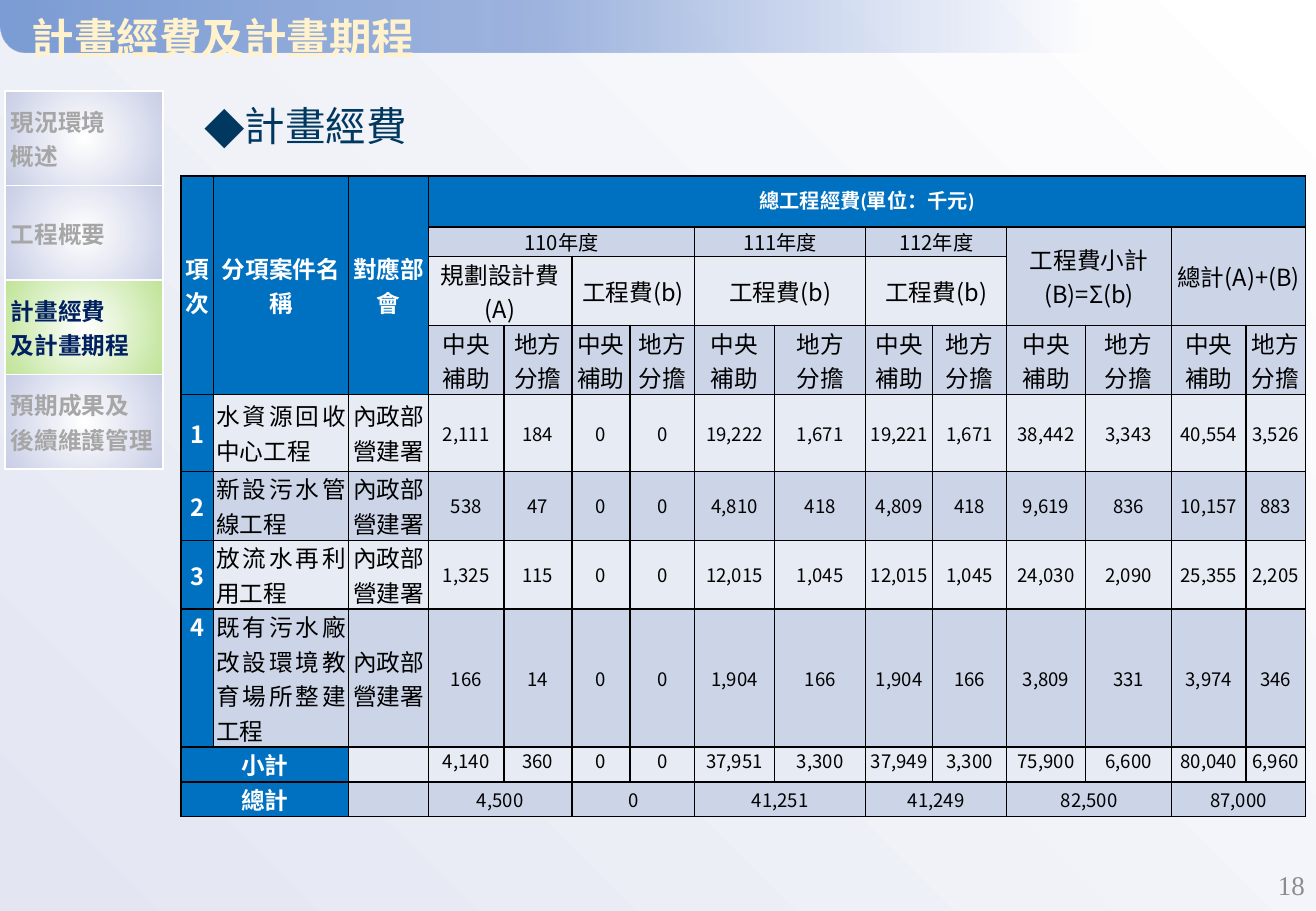
from lxml import etree
from pptx import Presentation
from pptx.dml.color import RGBColor
from pptx.enum.shapes import MSO_SHAPE
from pptx.enum.text import MSO_ANCHOR, MSO_AUTO_SIZE, PP_ALIGN
from pptx.oxml.ns import qn
from pptx.util import Pt

LEFT, CENTER, RIGHT, JUSTIFY = PP_ALIGN.LEFT, PP_ALIGN.CENTER, PP_ALIGN.RIGHT, PP_ALIGN.JUSTIFY
TOP, MIDDLE = MSO_ANCHOR.TOP, MSO_ANCHOR.MIDDLE
DIAG_RECT = MSO_SHAPE.ROUND_2_DIAG_RECTANGLE
NO_FIT = MSO_AUTO_SIZE.NONE

CJK, SERIF, SANS = "Noto Sans CJK SC", "Times New Roman", "Calibri"
BLUE, PALE, LIGHT = "0070C0", "CCD5E8", "E7EBF4"
BLACK, WHITE, GREY = "000000", "FFFFFF", "A6A6A6"

SECTIONS = [["現況環境", "概述"], ["工程概要"], ["計畫經費", "及計畫期程"], ["預期成果及", "後續維護管理"]]
CURRENT_SECTION = 2

COLUMNS = [19.4, 79.9, 47.5, 44.6, 40.3, 34.6, 38.2, 47.5, 54, 39.6, 43.9, 46.8, 51.1, 43.9, 35.3]
ROWS = [30.2, 17.2, 40.9, 40.9, 45.6, 40.9, 40.9, 81.2, 20.7, 20.2]
LABEL_HEADS = ["項次", "分項案件名稱", "對應部會"]
YEARS = [(3, 4, "110年度"), (7, 2, "111年度"), (9, 2, "112年度")]
SUMS = [(11, "工程費小計(B)=Σ(b)"), (13, "總計(A)+(B)")]
COSTS = ["規劃設計費(A)"] + ["工程費(b)"] * 3
SHARES = [["中央", "補助"], ["地方", "分擔"]]
PROJECTS = [
    ("水資源回收中心工程", "2,111 184 0 0 19,222 1,671 19,221 1,671 38,442 3,343 40,554 3,526"),
    ("新設污水管線工程", "538 47 0 0 4,810 418 4,809 418 9,619 836 10,157 883"),
    ("放流水再利用工程", "1,325 115 0 0 12,015 1,045 12,015 1,045 24,030 2,090 25,355 2,205"),
    ("既有污水廠改設環境教育場所整建工程", "166 14 0 0 1,904 166 1,904 166 3,809 331 3,974 346"),
]
SUBTOTALS = "4,140 360 0 0 37,951 3,300 37,949 3,300 75,900 6,600 80,040 6,960"
TOTALS = "4,500 0 41,251 41,249 82,500 87,000"


def rgb(color):
    """Turn a hex string into a colour."""
    return RGBColor.from_string(color)


def add_run(p, text, size, color, font=CJK, bold=False):
    """Add one formatted run to a paragraph."""
    r = p.add_run()
    r.text = text
    r.font.size, r.font.name, r.font.bold = Pt(size), font, bold
    r.font.color.rgb = rgb(color)
    latin = r.font._element.find(qn("a:latin"))
    east_asian = etree.Element(qn("a:ea"), typeface=font)
    latin.addnext(east_asian)


def fill_gradient(fill, owner, stops, angle=None):
    """Fill with (position, colour, opacity) stops, linear or from the centre."""
    fill.solid()
    grad = etree.Element(qn("a:gradFill"), rotWithShape="1")
    stop_list = etree.SubElement(grad, qn("a:gsLst"))
    for position, color, opacity in stops:
        stop = etree.SubElement(stop_list, qn("a:gs"), pos=str(position * 1000))
        tone = etree.SubElement(stop, qn("a:srgbClr"), val=color)
        if opacity < 100:
            etree.SubElement(tone, qn("a:alpha"), val=str(opacity * 1000))
    if angle is None:
        center = etree.SubElement(grad, qn("a:path"), path="circle")
        etree.SubElement(center, qn("a:fillToRect"), l="50000", t="50000", r="50000", b="50000")
    else:
        etree.SubElement(grad, qn("a:lin"), ang=str(angle * 60000), scaled="0")
    solid = owner.find(qn("a:solidFill"))
    owner.replace(solid, grad)


def set_borders(cell, color):
    """Draw one-point lines on all sides of a cell."""
    tcPr = cell._tc.get_or_add_tcPr()
    for i, side in enumerate(["a:lnL", "a:lnR", "a:lnT", "a:lnB"]):
        ln = etree.Element(qn(side), w=str(Pt(1)))
        solid = etree.SubElement(ln, qn("a:solidFill"))
        etree.SubElement(solid, qn("a:srgbClr"), val=color)
        tcPr.insert(i, ln)


def add_grid(s, left, top, columns, rows, border, insets):
    """Add a plain table with the given column widths and row heights."""
    frame = s.shapes.add_table(len(rows), len(columns), Pt(left), Pt(top), Pt(sum(columns)), Pt(sum(rows)))
    table = frame.table
    table.first_row = table.horz_banding = False
    for column, width in zip(table.columns, columns):
        column.width = Pt(width)
    for row, height in zip(table.rows, rows):
        row.height = Pt(height)
    for cell in table.iter_cells():
        cell.margin_left = cell.margin_right = Pt(insets[0])
        cell.margin_top = cell.margin_bottom = Pt(insets[1])
        cell.vertical_anchor = MIDDLE
        set_borders(cell, border)
    return table


def write_lines(cell, lines, align, size, color, font=CJK, bold=False):
    """Write one paragraph per line in a cell."""
    tf = cell.text_frame
    for i, line in enumerate(lines):
        p = tf.add_paragraph() if i else tf.paragraphs[0]
        p.alignment = align
        add_run(p, line, size, color, font, bold)


def put(table, row, col, text, fill, size=14, span=(1, 1), align=CENTER, font=CJK, anchor=MIDDLE):
    """Fill a cost cell, merged over span, bold white on blue."""
    cell = table.cell(row, col)
    if span != (1, 1):
        cell.merge(table.cell(row + span[0] - 1, col + span[1] - 1))
    cell.fill.solid()
    cell.fill.fore_color.rgb = rgb(fill)
    cell.vertical_anchor = anchor
    heading = fill == BLUE
    lines = [text] if isinstance(text, str) else text
    write_lines(cell, lines, align, size, WHITE if heading else BLACK, font, heading)
    if not lines:
        etree.SubElement(cell.text_frame.paragraphs[0]._p, qn("a:endParaRPr"), sz=str(size * 100))


def cost_heads(table):
    """Fill the four header rows."""
    for col, text in enumerate(LABEL_HEADS):
        put(table, 0, col, text, BLUE, span=(4, 1))
    put(table, 0, 3, "總工程經費(單位：千元)", BLUE, 12, (1, 12), font=SANS)
    for col, width, text in YEARS:
        put(table, 1, col, text, PALE, 12, (1, width))
    for col, text in SUMS:
        put(table, 1, col, text, PALE, span=(2, 2))
    for i, text in enumerate(COSTS):
        put(table, 2, 3 + 2 * i, text, LIGHT, span=(1, 2))
    for i in range(12):
        put(table, 3, 3 + i, SHARES[i % 2], PALE)


def cost_table(s, left, top):
    """Add the cost table by project and year."""
    table = add_grid(s, left, top, COLUMNS, ROWS, BLACK, (1.44, 0))
    cost_heads(table)
    for i, (name, amounts) in enumerate(PROJECTS):
        row, fill = 4 + i, PALE if i % 2 else LIGHT
        anchor = TOP if i == len(PROJECTS) - 1 else MIDDLE
        put(table, row, 0, str(i + 1), BLUE, anchor=anchor)
        put(table, row, 1, name, fill, align=JUSTIFY, anchor=anchor)
        put(table, row, 2, "內政部營建署", fill)
        for col, amount in enumerate(amounts.split(), 3):
            put(table, row, col, amount, fill, 11)
    for row, label, fill in [(8, "小計", LIGHT), (9, "總計", PALE)]:
        put(table, row, 0, label, BLUE, span=(1, 2))
        put(table, row, 2, [], fill, 11)
    for col, amount in enumerate(SUBTOTALS.split(), 3):
        put(table, 8, col, amount, LIGHT, 11, anchor=TOP)
    for i, amount in enumerate(TOTALS.split()):
        put(table, 9, 3 + 2 * i, amount, PALE, 11, (1, 2))


def section_menu(s, left, top, width, row_height):
    """Add the section menu with the current section lit."""
    table = add_grid(s, left, top, [width], [row_height] * len(SECTIONS), WHITE, (3.6, 3.6))
    for i, lines in enumerate(SECTIONS):
        cell = table.cell(i, 0)
        edge, color = ("BEE396", "002060") if i == CURRENT_SECTION else ("C8CDE5", GREY)
        fill_gradient(cell.fill, cell._tc.tcPr, [(0, WHITE, 100), (100, edge, 100)])
        write_lines(cell, lines, JUSTIFY, 14, color, bold=True)


def place_text(sp, box, align, anchor):
    """Place a text shape and return its frame and first paragraph."""
    sp.left, sp.top, sp.width, sp.height = [Pt(v) for v in box]
    tf = sp.text_frame
    tf.word_wrap, tf.auto_size, tf.vertical_anchor = True, NO_FIT, anchor
    p = tf.paragraphs[0]
    p.alignment = align
    return p


def header(s, left, top, width, height):
    """Add the fading bar and the title."""
    bar = s.shapes.add_shape(DIAG_RECT, Pt(left), Pt(top), Pt(width), Pt(height))
    bar.adjustments[0], bar.adjustments[1] = 0, 0.5
    bar.shadow.inherit = False
    bar.line.fill.background()
    fill_gradient(bar.fill, bar._element.spPr, [(0, "9DB5E3", 0), (50, "90AADA", 85), (100, "7C9DD5", 100)], 180)
    s.shapes._spTree.insert(2, bar._element)
    p = place_text(s.shapes.title, (left + 11.5, top + 8.6, 672.5, height), LEFT, MIDDLE)
    p.line_spacing = 0.9
    add_run(p, "計畫經費及計畫期程", 25.2, "FFF2CC", bold=True)


def body_heading(s, left, top, width, height):
    """Write the diamond-bulleted heading in the body placeholder."""
    p = place_text(s.placeholders[1], (left, top, width, height), LEFT, TOP)
    p.line_spacing, p.space_before = 0.9, Pt(0)
    pPr = p._p.get_or_add_pPr()
    pPr.set("marL", str(Pt(18)))
    pPr.set("indent", str(-Pt(18)))
    etree.SubElement(pPr, qn("a:buFont"), typeface=CJK)
    etree.SubElement(pPr, qn("a:buChar"), char="◆")
    add_run(p, "計畫經費", 24, "003860")


def page_number(s, left, top, width, height):
    """Add the page number."""
    sp = s.shapes.add_textbox(Pt(left), Pt(top), Pt(width), Pt(height))
    p = place_text(sp, (left, top, width, height), RIGHT, MIDDLE)
    add_run(p, "18", 16, "8C8C8C", SERIF)


def main():
    """Build and save the slide."""
    prs = Presentation()
    prs.slide_width, prs.slide_height = Pt(780), Pt(540)
    s = prs.slides.add_slide(prs.slide_layouts[1])
    fill = s.background.fill
    fill.solid()
    bgPr = s._element.cSld.find(qn("p:bg")).find(qn("p:bgPr"))
    fill_gradient(fill, bgPr, [(0, WHITE, 100), (100, "E3E6F2", 100)], 135)
    header(s, 0, 0, 646.5, 31)
    body_heading(s, 113.8, 59.8, 283.7, 471.6)
    page_number(s, 604.8, 509.8, 175.7, 28.8)
    section_menu(s, 2.9, 54, 93.6, 56)
    cost_table(s, 107.3, 104.4)
    prs.save("out.pptx")


if __name__ == "__main__":
    main()
